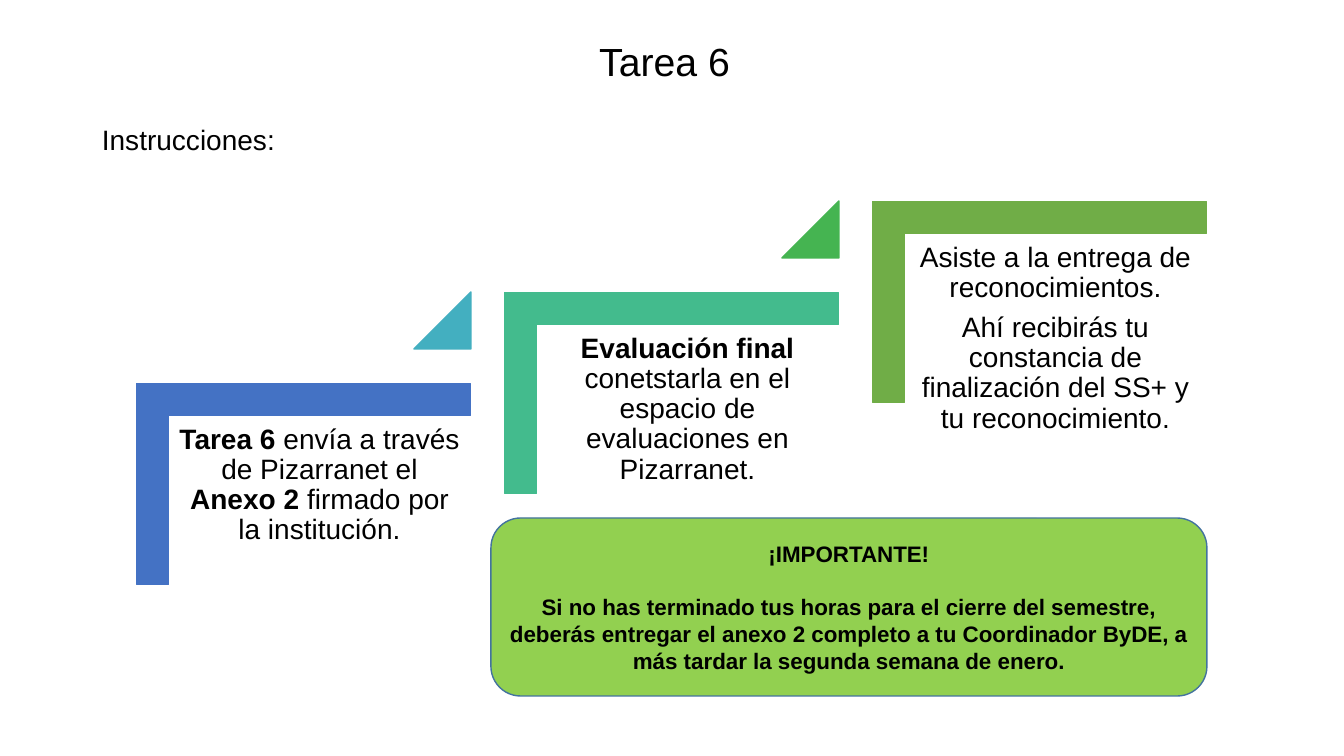
"""Build the "Tarea 6" slide: three rising steps and an important notice."""
from pptx import Presentation
from pptx import util as u
from pptx.dml.color import RGBColor
from pptx.enum import shapes, text

PX_PER_INCH = 100.8
BLACK = RGBColor(0x00, 0x00, 0x00)
BLUE = RGBColor(0x44, 0x72, 0xC4)
CYAN = RGBColor(0x43, 0xAF, 0xC0)
TEAL = RGBColor(0x43, 0xBB, 0x8D)
GREEN = RGBColor(0x45, 0xB4, 0x51)
OLIVE = RGBColor(0x70, 0xAD, 0x47)
LIME = RGBColor(0x92, 0xD0, 0x50)
NOTICE_EDGE = RGBColor(0x43, 0x73, 0x9E)

STEP_RIGHT, STEP_UP = 368, 91
CENTER, LEFT = text.PP_ALIGN.CENTER, text.PP_ALIGN.LEFT
MIDDLE, TOP = text.MSO_ANCHOR.MIDDLE, text.MSO_ANCHOR.TOP

STEPS = [
    (BLUE, CYAN, [[("Tarea 6 ", True), ("envía a través de Pizarranet el ", False),
                   ("Anexo 2 ", True), ("firmado por la institución.", False)]]),
    (TEAL, GREEN, [[("Evaluación final ", True),
                    ("conetstarla en el espacio de evaluaciones en Pizarranet.", False)]]),
    (OLIVE, None, [[("Asiste a la entrega de reconocimientos.", False)],
                   [("Ahí recibirás tu constancia de finalización del SS+ "
                     "y tu reconocimiento.", False)]]),
]
NOTICE = [
    [("¡IMPORTANTE!", True)],
    [("Si no has terminado tus horas para el cierre del semestre, deberás entregar "
      "el anexo 2 completo a tu Coordinador ByDE, a más tardar la segunda semana "
      "de enero.", True)],
]


def px(length):
    """Turn pixels into EMU."""
    return u.Emu(round(length * u.Inches(1) / PX_PER_INCH))


def apply(target, formats):
    """Set every attribute named in a dict of format values."""
    for name, value in formats.items():
        setattr(target, name, value)


def write(frame, paragraphs, size, frame_format, paragraph_format):
    """Fill a text frame with paragraphs made of (words, bold) runs."""
    apply(frame, {"word_wrap": True, **frame_format})
    for index, runs in enumerate(paragraphs):
        paragraph = frame.add_paragraph() if index else frame.paragraphs[0]
        apply(paragraph, paragraph_format)
        for words, bold in runs:
            run = paragraph.add_run()
            run.text = words
            apply(run.font, {"name": "Arial", "size": u.Pt(size), "bold": bold})
            run.font.color.rgb = BLACK


def add_label(slide, box, paragraphs, size, frame_format, paragraph_format):
    """Add a wrapped text box."""
    label = slide.shapes.add_textbox(*map(px, box))
    write(label.text_frame, paragraphs, size, frame_format, paragraph_format)


def add_figure(slide, preset, box, fill, edge, adjustments=()):
    """Add a flat preset shape with a one-point outline."""
    figure = slide.shapes.add_shape(preset, *map(px, box))
    figure.shadow.inherit = False
    figure.fill.solid()
    figure.fill.fore_color.rgb = fill
    figure.line.color.rgb = edge
    figure.line.width = u.Pt(1)
    for index, value in enumerate(adjustments):
        figure.adjustments[index] = value
    return figure


def add_step(slide, index, bracket_color, arrow_color, paragraphs):
    """Add one stair step: bracket, text and the triangle to the next step."""
    dx, dy = index * STEP_RIGHT, -index * STEP_UP
    bracket = add_figure(slide, shapes.MSO_SHAPE.CORNER, (203 + dx, 317 + dy, 201, 334),
                         bracket_color, bracket_color, (0.16, 0.16))
    bracket.rotation = 90
    insets = {f"margin_{side}": px(8) for side in ("left", "top", "right", "bottom")}
    add_label(slide, (169 + dx, 417 + dy, 301, 264), paragraphs, 20, insets,
              {"alignment": CENTER, "line_spacing": 0.9, "space_after": u.Pt(7)})
    if arrow_color is not None:
        add_figure(slide, shapes.MSO_SHAPE.ISOSCELES_TRIANGLE, (414 + dx, 292 + dy, 57, 57),
                   arrow_color, arrow_color, (1,))


def add_notice(slide):
    """Add the rounded notice at the bottom."""
    notice = add_figure(slide, shapes.MSO_SHAPE.ROUNDED_RECTANGLE, (491, 518, 716, 178),
                        LIME, NOTICE_EDGE)
    write(notice.text_frame, NOTICE, 16, {"vertical_anchor": MIDDLE}, {"alignment": CENTER})
    notice.text_frame.paragraphs[0].space_after = u.Pt(19)


def main():
    """Build and save the slide."""
    deck = Presentation()
    apply(deck, {"slide_width": px(1344), "slide_height": px(756)})
    slide = deck.slides.add_slide(deck.slide_layouts[6])
    add_label(slide, (92, 96, 1159, 90), [[("Instrucciones:", False)]], 20,
              {"vertical_anchor": MIDDLE}, {"alignment": LEFT, "line_spacing": 0.9})
    for index, step in enumerate(STEPS):
        add_step(slide, index, *step)
    add_notice(slide)
    add_label(slide, (0, 32, 1329, 57), [[("Tarea 6", False)]], 28,
              {"vertical_anchor": TOP}, {"alignment": CENTER})
    deck.save("out.pptx")


if __name__ == "__main__":
    main()
